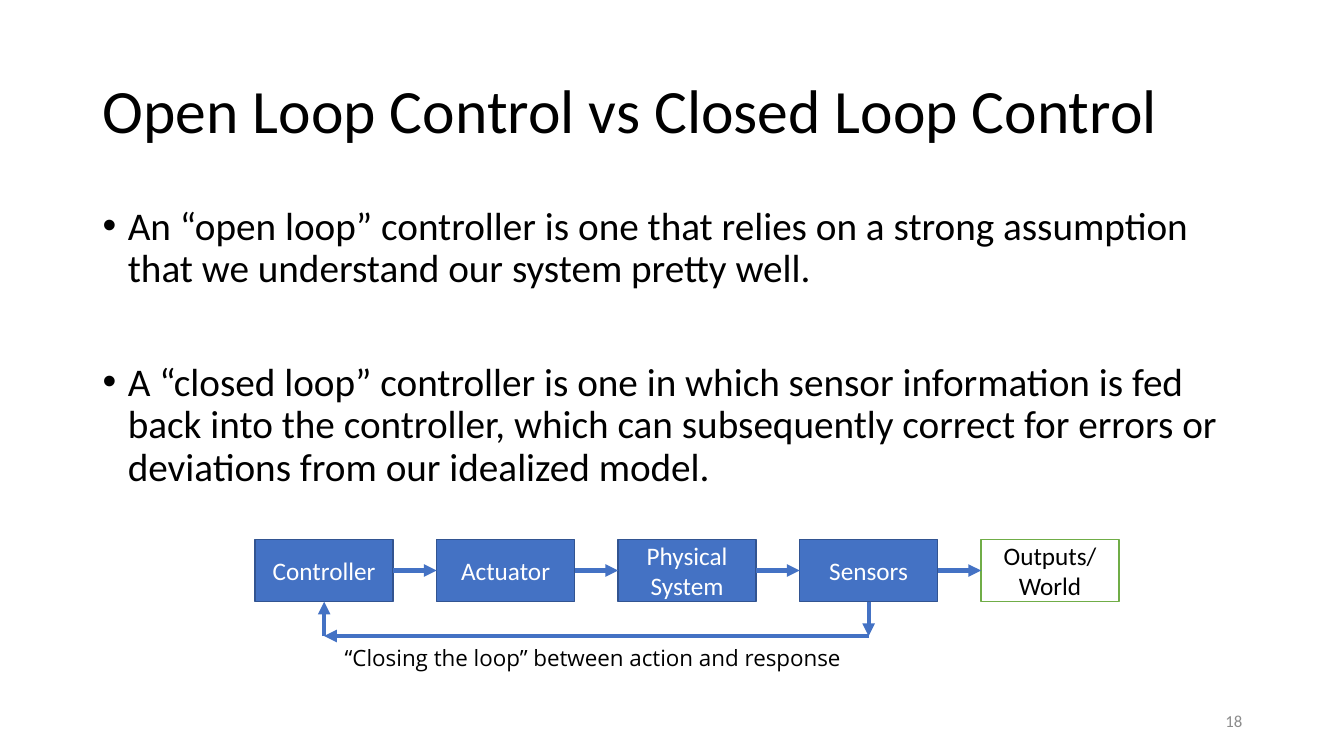
from dataclasses import dataclass

from lxml.etree import SubElement
from pptx import Presentation
from pptx.dml.color import RGBColor
from pptx.enum.shapes import MSO_CONNECTOR as Connector, MSO_SHAPE as Shape
from pptx.enum.text import MSO_ANCHOR as Anchor, PP_ALIGN as Align
from pptx.oxml.ns import qn
from pptx.util import Inches, Pt


@dataclass(frozen=True)
class Theme:
    font: str = "Calibri"
    caption_font: str = "Open Sans"
    ink: str = "000000"
    paper: str = "FFFFFF"
    blue: str = "4472C4"
    blue_edge: str = "325491"
    green_edge: str = "70AD47"
    grey: str = "8C8C8C"
    title_size: int = 44
    body_size: int = 28
    stage_size: int = 18
    caption_size: int = 16
    number_size: int = 12


class LoopSlide:
    def __init__(self, deck, theme):
        self.theme = theme
        self.slide = deck.slides.add_slide(deck.slide_layouts[5])

    def add_text(self, paragraph, text, size, color, align=Align.LEFT, font=None):
        paragraph.alignment = align
        run = paragraph.add_run()
        run.text = text
        run.font.name = font or self.theme.font
        run.font.size = Pt(size)
        run.font.color.rgb = RGBColor.from_string(color)

    def title(self, text, left, top, width, height):
        heading = self.slide.shapes.title
        heading.left, heading.top = Inches(left), Inches(top)
        heading.width, heading.height = Inches(width), Inches(height)
        frame = heading.text_frame
        frame.vertical_anchor = Anchor.MIDDLE
        paragraph = frame.paragraphs[0]
        paragraph.line_spacing = 0.9
        self.add_text(paragraph, text, self.theme.title_size, self.theme.ink)

    def frame(self, left, top, width, height, anchor=Anchor.TOP, wrap=True):
        box = self.slide.shapes.add_textbox(
            Inches(left), Inches(top), Inches(width), Inches(height))
        box.text_frame.word_wrap = wrap
        box.text_frame.vertical_anchor = anchor
        return box.text_frame

    def label(self, text, area, size, color, align=Align.LEFT, font=None, **layout):
        frame = self.frame(*area, **layout)
        self.add_text(frame.paragraphs[0], text, size, color, align, font)

    def bullets(self, points, area):
        frame = self.frame(*area)
        for index, (text, space_before) in enumerate(points):
            paragraph = frame.add_paragraph() if index else frame.paragraphs[0]
            paragraph.line_spacing = 0.9
            paragraph.space_before = Pt(space_before)
            self.add_text(paragraph, text, self.theme.body_size, self.theme.ink)
            properties = paragraph._p.get_or_add_pPr()
            properties.set("marL", str(Inches(0.25)))
            properties.set("indent", str(-Inches(0.25)))
            SubElement(properties, qn("a:buFont")).set("typeface", "Arial")
            SubElement(properties, qn("a:buChar")).set("char", "•")

    def stage(self, lines, left, top, width, height, fill, edge, color):
        block = self.slide.shapes.add_shape(
            Shape.RECTANGLE, Inches(left), Inches(top), Inches(width), Inches(height))
        block.shadow.inherit = False
        block.fill.solid()
        block.fill.fore_color.rgb = RGBColor.from_string(fill)
        block.line.color.rgb = RGBColor.from_string(edge)
        block.line.width = Pt(1)
        frame = block.text_frame
        frame.word_wrap = True
        frame.vertical_anchor = Anchor.MIDDLE
        for index, text in enumerate(lines):
            paragraph = frame.add_paragraph() if index else frame.paragraphs[0]
            self.add_text(paragraph, text, self.theme.stage_size, color, Align.CENTER)
        return block

    def arrow(self, start, end, source=None, target=None):
        link = self.slide.shapes.add_connector(
            Connector.STRAIGHT, *(Inches(value) for value in (*start, *end)))
        link.line.color.rgb = RGBColor.from_string(self.theme.blue)
        link.line.width = Pt(3)
        SubElement(link.get_or_add_ln(), qn("a:tailEnd")).set("type", "triangle")
        SubElement(link._element.spPr, qn("a:effectLst"))
        if source:
            link.begin_connect(*source)
        if target:
            link.end_connect(*target)


def main():
    theme = Theme()
    deck = Presentation()
    deck.slide_width, deck.slide_height = Inches(13.33), Inches(7.5)
    page = LoopSlide(deck, theme)

    page.title("Open Loop Control vs Closed Loop Control", 0.92, 0.4, 11.5, 1.45)
    page.bullets([
        ("An “open loop” controller is one that relies on a strong assumption "
         "that we understand our system pretty well.", 10),
        ("A “closed loop” controller is one in which sensor information is fed "
         "back into the controller, which can subsequently correct for errors or "
         "deviations from our idealized model.", 51),
    ], (0.92, 2, 11.5, 3.2))
    page.label("18", (9.42, 6.95, 3, 0.4), theme.number_size, theme.grey,
               Align.RIGHT, anchor=Anchor.MIDDLE)

    first_left, top, width, height, pitch = 2.53, 5.35, 1.37, 0.62, 1.8
    solid = (theme.blue, theme.blue_edge, theme.paper)
    hollow = (theme.paper, theme.green_edge, theme.ink)
    chain = [
        (["Controller"], solid),
        (["Actuator"], solid),
        (["Physical System"], solid),
        (["Sensors"], solid),
        (["Outputs/", "World"], hollow),
    ]
    stages = [page.stage(lines, first_left + index * pitch, top, width, height, *colors)
              for index, (lines, colors) in enumerate(chain)]

    middle = top + height / 2
    for index, (source, target) in enumerate(zip(stages, stages[1:])):
        left = first_left + index * pitch
        page.arrow((left + width, middle), (left + pitch, middle),
                   (source, 3), (target, 1))

    controller, sensors = stages[0], stages[3]
    controller_x = first_left + width / 2
    sensors_x = controller_x + 3 * pitch
    bottom, return_y = top + height, 6.31
    page.arrow((sensors_x, bottom), (sensors_x, return_y), source=(sensors, 2))
    page.arrow((sensors_x, return_y), (controller_x, return_y))
    page.arrow((controller_x, return_y), (controller_x, bottom), target=(controller, 2))
    page.label("“Closing the loop” between action and response",
               (3.32, 6.34, 5.18, 0.37), theme.caption_size, theme.ink,
               font=theme.caption_font, wrap=False)

    deck.save("out.pptx")


if __name__ == "__main__":
    main()
